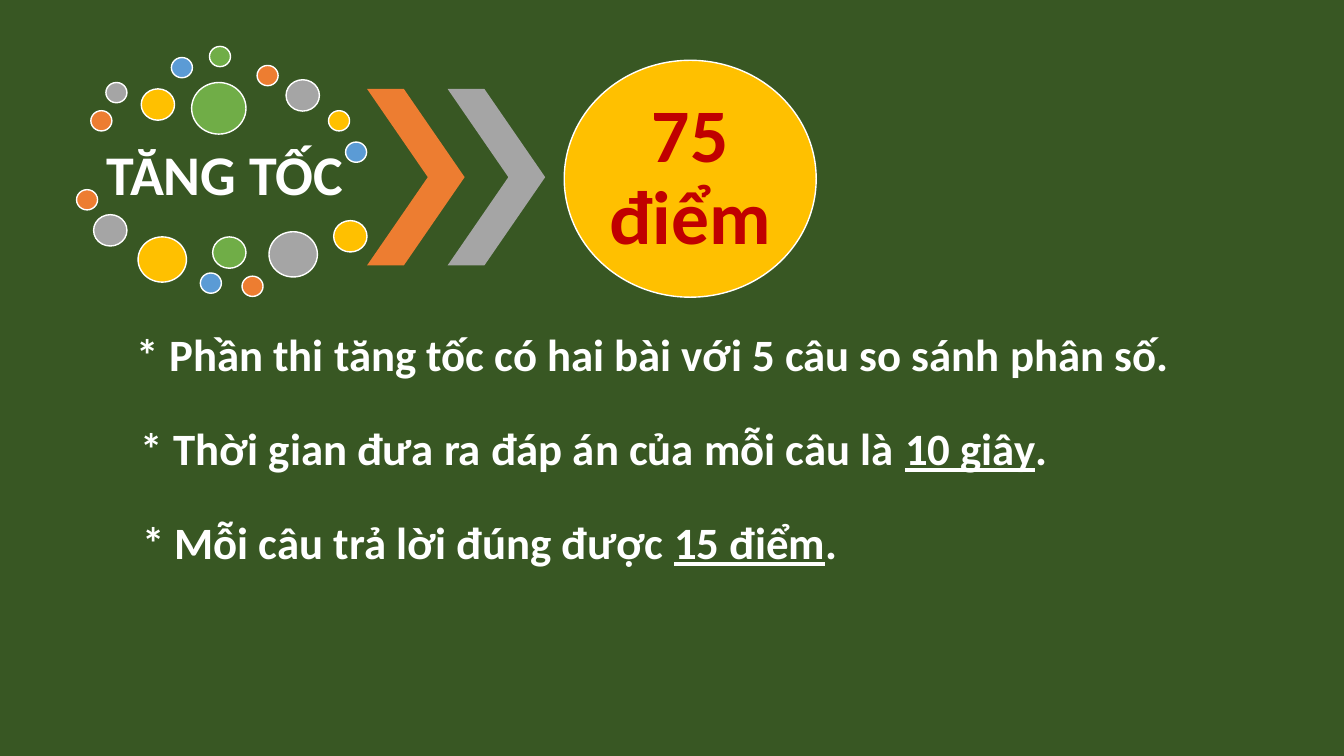
from pptx import Presentation
from pptx.dml.color import RGBColor
from pptx.enum.shapes import MSO_SHAPE
from pptx.enum.text import MSO_ANCHOR, MSO_AUTO_SIZE, PP_ALIGN
from pptx.util import Cm, Pt

FONT = "Calibri"
DARK_GREEN = RGBColor(0x38, 0x57, 0x23)
WHITE = RGBColor(0xFF, 0xFF, 0xFF)
RED = RGBColor(0xC0, 0x00, 0x00)
ORANGE = RGBColor(0xED, 0x7D, 0x31)
GREY = RGBColor(0xA5, 0xA5, 0xA5)
GOLD = RGBColor(0xFF, 0xC0, 0x00)
BLUE = RGBColor(0x5B, 0x9B, 0xD5)
GREEN = RGBColor(0x70, 0xAD, 0x47)

# Dot sizes: width, height in cm
SMALL, MEDIUM, LARGE, HUGE = (0.53, 0.51), (0.84, 0.79), (1.22, 1.14), (1.37, 1.3)

# Dots around the title: left, top in cm, size, colour
DOTS = [
    (2.29, 2.79, SMALL, ORANGE),
    (2.67, 2.08, SMALL, GREY),
    (3.56, 2.24, MEDIUM, GOLD),
    (4.32, 1.45, SMALL, BLUE),
    (5.28, 1.17, SMALL, GREEN),
    (6.48, 1.65, SMALL, ORANGE),
    (7.21, 2.01, MEDIUM, GREY),
    (8.28, 2.79, SMALL, GOLD),
    (8.71, 3.58, SMALL, BLUE),
    (4.83, 2.08, HUGE, GREEN),
    (1.93, 4.78, SMALL, ORANGE),
    (2.36, 5.41, MEDIUM, GREY),
    (3.48, 5.97, LARGE, GOLD),
    (5.05, 6.88, SMALL, BLUE),
    (5.36, 5.97, MEDIUM, GREEN),
    (6.1, 6.96, SMALL, ORANGE),
    (6.78, 5.84, LARGE, GREY),
    (8.41, 5.56, MEDIUM, GOLD),
]

# Rules of the round: left, top, width in cm, then plain, underlined, plain text
RULES = [
    (3.2, 8.1, 28.2, ["* Phần thi tăng tốc có hai bài với 5 câu so sánh phân số."]),
    (3.3, 10.48, 26.4,
     ["* Thời gian đưa ra đáp án của mỗi câu là ", "10 giây", "."]),
    (3.33, 12.84, 26.4, ["* Mỗi câu trả lời đúng được ", "15 điểm", "."]),
]


def style_paragraph(paragraph, size, color):
    paragraph.font.name = FONT
    paragraph.font.size = Pt(size)
    paragraph.font.bold = True
    paragraph.font.color.rgb = color


def set_centred_text(shape, text, size, color, inset):
    frame = shape.text_frame
    frame.text = text
    frame.word_wrap = True
    frame.auto_size = MSO_AUTO_SIZE.NONE
    frame.vertical_anchor = MSO_ANCHOR.MIDDLE
    frame.margin_left = frame.margin_right = Cm(inset)
    frame.margin_top = frame.margin_bottom = Cm(inset)
    paragraph = frame.paragraphs[0]
    paragraph.alignment = PP_ALIGN.CENTER
    paragraph.line_spacing = 0.9
    style_paragraph(paragraph, size, color)


def set_title(slide):
    title = slide.shapes.title
    title.left, title.top = Cm(2.31), Cm(3.43)
    title.width, title.height = Cm(6.71), Cm(2.08)
    set_centred_text(title, "TĂNG TỐC", 40, WHITE, 0.15)


def add_filled_shape(slide, kind, left, top, width, height, color):
    shape = slide.shapes.add_shape(kind, Cm(left), Cm(top), Cm(width), Cm(height))
    shape.shadow.inherit = False
    shape.fill.solid()
    shape.fill.fore_color.rgb = color
    return shape


def add_circle(slide, left, top, size, color):
    circle = add_filled_shape(slide, MSO_SHAPE.OVAL, left, top, *size, color)
    circle.line.color.rgb = WHITE
    circle.line.width = Pt(1)
    return circle


def add_chevron(slide, left, color):
    chevron = add_filled_shape(slide, MSO_SHAPE.CHEVRON, left, 2.24, 2.46, 4.45, color)
    chevron.adjustments[0] = 0.623
    chevron.line.fill.background()


def add_rule(slide, left, top, width, parts):
    box = slide.shapes.add_textbox(Cm(left), Cm(top), Cm(width), Cm(1.63))
    box.text_frame.word_wrap = True
    paragraph = box.text_frame.paragraphs[0]
    style_paragraph(paragraph, 32, WHITE)
    for index, text in enumerate(parts):
        run = paragraph.add_run()
        run.text = text
        if index == 1:
            run.font.underline = True


def main():
    presentation = Presentation()
    presentation.slide_width, presentation.slide_height = Cm(33.87), Cm(19.05)
    slide = presentation.slides.add_slide(presentation.slide_layouts[5])
    slide.background.fill.solid()
    slide.background.fill.fore_color.rgb = DARK_GREEN

    # Title in its ring of dots
    set_title(slide)
    for dot in DOTS:
        add_circle(slide, *dot)

    # Chevrons leading to the points
    add_chevron(slide, 9.25, ORANGE)
    add_chevron(slide, 11.28, GREY)
    points = add_circle(slide, 14.22, 1.52, (6.35, 5.97), GOLD)
    set_centred_text(points, "75 điểm", 54, RED, 0.1)

    # Rules of the round
    for rule in RULES:
        add_rule(slide, *rule)

    presentation.save("out.pptx")


if __name__ == "__main__":
    main()
